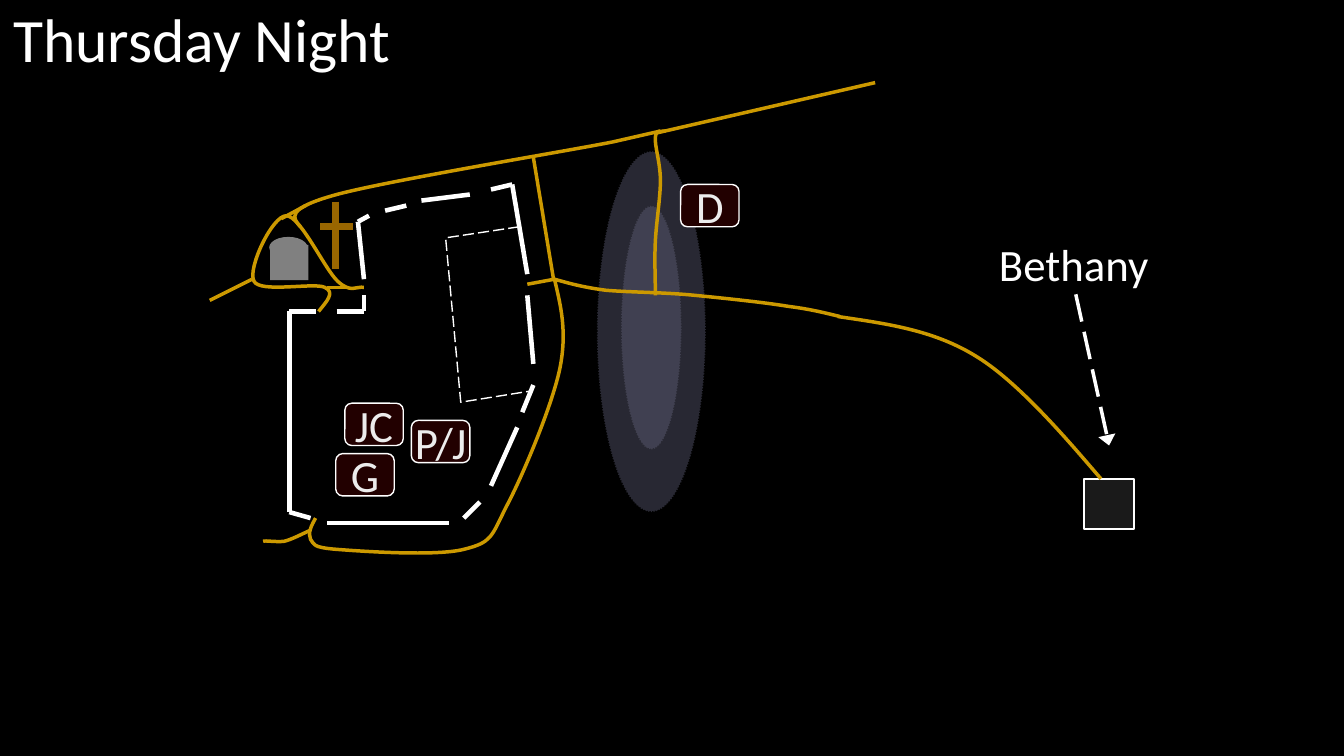
"""Build the Thursday Night map slide."""
from dataclasses import dataclass
from itertools import pairwise

from pptx import Presentation
from pptx.dml.color import RGBColor
from pptx.enum.dml import MSO_LINE
from pptx.enum.shapes import MSO_CONNECTOR, MSO_SHAPE
from pptx.enum.text import MSO_ANCHOR, MSO_AUTO_SIZE, PP_ALIGN
from pptx.oxml.ns import qn
from pptx.oxml.xmlchemy import OxmlElement
from pptx.util import Inches, Pt

LONG_DASH, DOT = MSO_LINE.LONG_DASH, MSO_LINE.ROUND_DOT
RECTANGLE, OVAL, ROUNDED = MSO_SHAPE.RECTANGLE, MSO_SHAPE.OVAL, MSO_SHAPE.ROUNDED_RECTANGLE
STRAIGHT = MSO_CONNECTOR.STRAIGHT
TOP, MIDDLE = MSO_ANCHOR.TOP, MSO_ANCHOR.MIDDLE
LEFT, CENTER = PP_ALIGN.LEFT, PP_ALIGN.CENTER
GROW = MSO_AUTO_SIZE.SHAPE_TO_FIT_TEXT
TITLE_ONLY = 5
COLUMNS, ROWS = 13.33, 7.5


@dataclass(frozen=True)
class Theme:
    """Colours, type sizes and line widths."""
    font: str = "Calibri"
    title_size: int = 44
    label_size: int = 32
    night: str = "000000"
    white: str = "FFFFFF"
    hill: str = "CCCCFF"
    road: str = "CC9900"
    cross: str = "996600"
    tomb: str = "808080"
    tag: str = "220000"
    tag_text: str = "ECECEC"
    thin: float = 1
    village_width: float = 1.5
    road_width: float = 2.5
    wall_width: float = 3.25
    cross_width: float = 5


THEME = Theme()

WALLS = [
    [(5.23, 2.72), (5.08, 1.83), (4.87, 1.88)],
    [(5.23, 2.93), (5.29, 3.61)],
    [(5.29, 3.82), (5.18, 4.09)],
    [(5.13, 4.24), (4.87, 4.82)],
    [(4.76, 4.98), (4.6, 5.14)],
    [(4.45, 5.19), (3.24, 5.19)],
    [(3.08, 5.14), (2.87, 5.08), (2.87, 3.09), (3.13, 3.09)],
    [(3.34, 3.09), (3.61, 3.09), (3.61, 2.93)],
    [(3.61, 2.77), (3.55, 2.2), (3.66, 2.14)],
    [(4.03, 2.04), (3.82, 2.09)],
    [(4.66, 1.93), (4.18, 1.99)],
]
STRAIGHT_ROADS = [
    [(6.07, 1.41), (6.55, 1.3)],
    [(6.51, 1.32), (8.68, 0.82)],
    [(5.23, 2.82), (5.5, 2.77)],
    [(5.49, 2.77), (5.29, 1.56)],
    [(2.79, 2.17), (3.03, 2.04)],
    [(2.5, 2.77), (2.08, 2.98)],
    [(3.45, 2.85), (3.24, 2.85)],
]
CURVED_ROADS = [
    [(8.31, 3.14), (8.78, 3.21), (9.26, 3.27), (9.69, 3.54),
     (10.13, 3.81), (10.66, 4.45), (10.92, 4.75)],
    [(3.13, 5.14), (3.09, 5.21), (3.05, 5.29), (3.08, 5.35),
     (3.12, 5.4), (3.09, 5.43), (3.34, 5.45), (3.6, 5.47), (4.32, 5.52), (4.6, 5.45),
     (4.88, 5.38), (4.87, 5.33), (5.02, 5.03), (5.18, 4.73), (5.47, 4.04), (5.55, 3.67),
     (5.63, 3.29), (5.56, 3.03), (5.5, 2.77)],
    [(3.16, 3.09), (3.24, 2.99), (3.33, 2.9), (3.22, 2.85),
     (3.11, 2.8), (2.58, 2.91), (2.52, 2.79), (2.45, 2.67), (2.7, 2.14), (2.84, 2.14),
     (2.98, 2.14), (3.22, 2.67), (3.35, 2.79), (3.48, 2.91), (3.53, 2.84), (3.61, 2.85)],
    [(2.98, 2.25), (2.9, 2.16), (2.83, 2.07), (3.34, 1.93),
     (3.86, 1.79), (5.62, 1.5), (6.07, 1.41)],
    [(5.5, 2.77), (5.64, 2.81), (5.78, 2.85), (6.01, 2.88),
     (6.24, 2.9), (6.59, 2.9), (6.89, 2.93), (7.19, 2.96), (7.58, 3), (7.82, 3.04),
     (8.06, 3.07), (8.2, 3.11), (8.33, 3.14)],
    [(6.5, 2.93), (6.5, 2.75), (6.49, 2.58), (6.5, 2.39),
     (6.51, 2.2), (6.55, 1.96), (6.55, 1.79), (6.55, 1.62), (6.49, 1.44), (6.5, 1.36),
     (6.51, 1.28), (6.55, 1.31), (6.6, 1.3)],
    [(3.08, 5.26), (2.99, 5.3), (2.9, 5.35), (2.82, 5.37),
     (2.74, 5.38), (2.63, 5.36), (2.61, 5.37)],
]
TEMPLE_COURT = [(5.15, 2.25), (4.42, 2.36), (4.57, 3.99), (5.26, 3.88)]
CROSS = [[(3.33, 2), (3.33, 2.67)], [(3.5, 2.25), (3.17, 2.25)]]
TAGS = {"D": (6.75, 1.83), "P/J": (4.08, 4.17), "JC": (3.42, 4), "G": (3.33, 4.5)}


def grid(*cells):
    """Turn columns and rows of the one-inch grid into lengths."""
    return [Inches(cell) for cell in cells]


def apply(target, values):
    """Set each attribute of the target from a dict."""
    for name, value in values.items():
        setattr(target, name, value)


def style_line(line, color, width, dash=None):
    """Give a line its colour, width and dash."""
    line.color.rgb = RGBColor.from_string(color)
    apply(line, {"width": Pt(width), "dash_style": dash})


def add_area(slide, kind, box, color, opacity=100, outline=None):
    """Add a filled preset shape, outlined on request."""
    shape = slide.shapes.add_shape(kind, *grid(*box))
    shape.shadow.inherit = False
    shape.fill.solid()
    shape.fill.fore_color.rgb = RGBColor.from_string(color)
    if opacity < 100:
        alpha = OxmlElement("a:alpha")
        alpha.set("val", str(opacity * 1000))
        shape._element.spPr.find(qn("a:solidFill"))[0].append(alpha)
    if outline:
        style_line(shape.line, *outline)
    else:
        shape.line.fill.background()
    return shape


def add_lines(slide, points, *look, arrow=False):
    """Join successive points with straight connectors."""
    for start, end in pairwise(points):
        connector = slide.shapes.add_connector(STRAIGHT, *grid(*start, *end))
        style_line(connector.line, *look)
        if arrow:
            head = OxmlElement("a:tailEnd")
            head.set("type", "triangle")
            head.set("w", "lg")
            connector.line._get_or_add_ln().append(head)
        connector._element.spPr.append(OxmlElement("a:effectLst"))


def add_outline(slide, points, *look, curved=False):
    """Draw an open outline, taking points by threes as curves if curved."""
    start, *rest = [grid(*point) for point in points]
    builder = slide.shapes.build_freeform(*start)
    builder.add_line_segments(rest, close=False)
    shape = builder.convert_to_shape()
    shape.shadow.inherit = False
    shape.fill.background()
    style_line(shape.line, *look)
    if curved:
        steps = list(shape._element.iter(qn("a:lnTo")))
        for index in range(0, len(steps), 3):
            curve = OxmlElement("a:cubicBezTo")
            steps[index].addprevious(curve)
            for step in steps[index:index + 3]:
                curve.append(step[0])
                step.getparent().remove(step)


def write(shape, text, size, color, frame, alignment=CENTER, spacing=1.0):
    """Write one formatted paragraph into a shape."""
    text_frame = shape.text_frame
    text_frame.text = text
    apply(text_frame, frame)
    paragraph = text_frame.paragraphs[0]
    apply(paragraph, {"alignment": alignment, "line_spacing": spacing, "space_before": Pt(0)})
    font = paragraph.runs[0].font
    apply(font, {"name": THEME.font, "size": Pt(size)})
    font.color.rgb = RGBColor.from_string(color)


def add_tag(slide, text, place):
    """Add a rounded marker with initials."""
    tag = add_area(slide, ROUNDED, (*place, 0.58, 0.42), THEME.tag,
                   outline=(THEME.white, THEME.thin))
    write(tag, text, THEME.label_size, THEME.tag_text,
          {"word_wrap": False, "vertical_anchor": MIDDLE, "margin_left": 0, "margin_right": 0})


def add_title(slide, text):
    """Place and format the title placeholder."""
    title = slide.shapes.title
    apply(title, dict(zip(("left", "top", "width", "height"), grid(0.03, -0.04, 4.58, 0.83))))
    write(title, text, THEME.title_size, THEME.white,
          {"word_wrap": True, "vertical_anchor": TOP, "auto_size": GROW}, LEFT)


def main():
    """Build and save the slide."""
    presentation = Presentation()
    apply(presentation, {"slide_width": Inches(COLUMNS), "slide_height": Inches(ROWS)})
    slide = presentation.slides.add_slide(presentation.slide_layouts[TITLE_ONLY])
    slide.background.fill.solid()
    slide.background.fill.fore_color.rgb = RGBColor.from_string(THEME.night)
    road = (THEME.road, THEME.road_width)
    add_title(slide, "Thursday Night")
    for box, opacity in (((6.16, 2.04, 0.6, 2.42), 15), ((5.92, 1.5, 1.08, 3.58), 20)):
        add_area(slide, OVAL, box, THEME.hill, opacity, (THEME.night, THEME.thin, DOT))
    add_area(slide, RECTANGLE, (10.75, 4.75, 0.5, 0.5), THEME.white, 10,
             (THEME.white, THEME.village_width))
    add_outline(slide, TEMPLE_COURT, THEME.white, THEME.thin, LONG_DASH)
    for wall in WALLS:
        add_lines(slide, wall, THEME.white, THEME.wall_width)
    for points in CURVED_ROADS:
        add_outline(slide, points, *road, curved=True)
    for points in STRAIGHT_ROADS:
        add_lines(slide, points, *road)
    for text, place in TAGS.items():
        add_tag(slide, text, place)
    for beam in CROSS:
        add_lines(slide, beam, THEME.cross, THEME.cross_width)
    add_area(slide, RECTANGLE, (2.68, 2.43, 0.38, 0.35), THEME.tomb)
    add_area(slide, OVAL, (2.67, 2.35, 0.38, 0.21), THEME.tomb)
    village = slide.shapes.add_textbox(*grid(9.75, 2.34, 1.75, 0.67))
    write(village, "Bethany", THEME.label_size, THEME.white,
          {"word_wrap": True, "margin_left": Inches(0.05), "margin_right": 0}, spacing=0.95)
    add_lines(slide, [(10.67, 2.92), (11, 4.42)], THEME.white, THEME.road_width, LONG_DASH,
              arrow=True)
    presentation.save("out.pptx")


if __name__ == "__main__":
    main()
